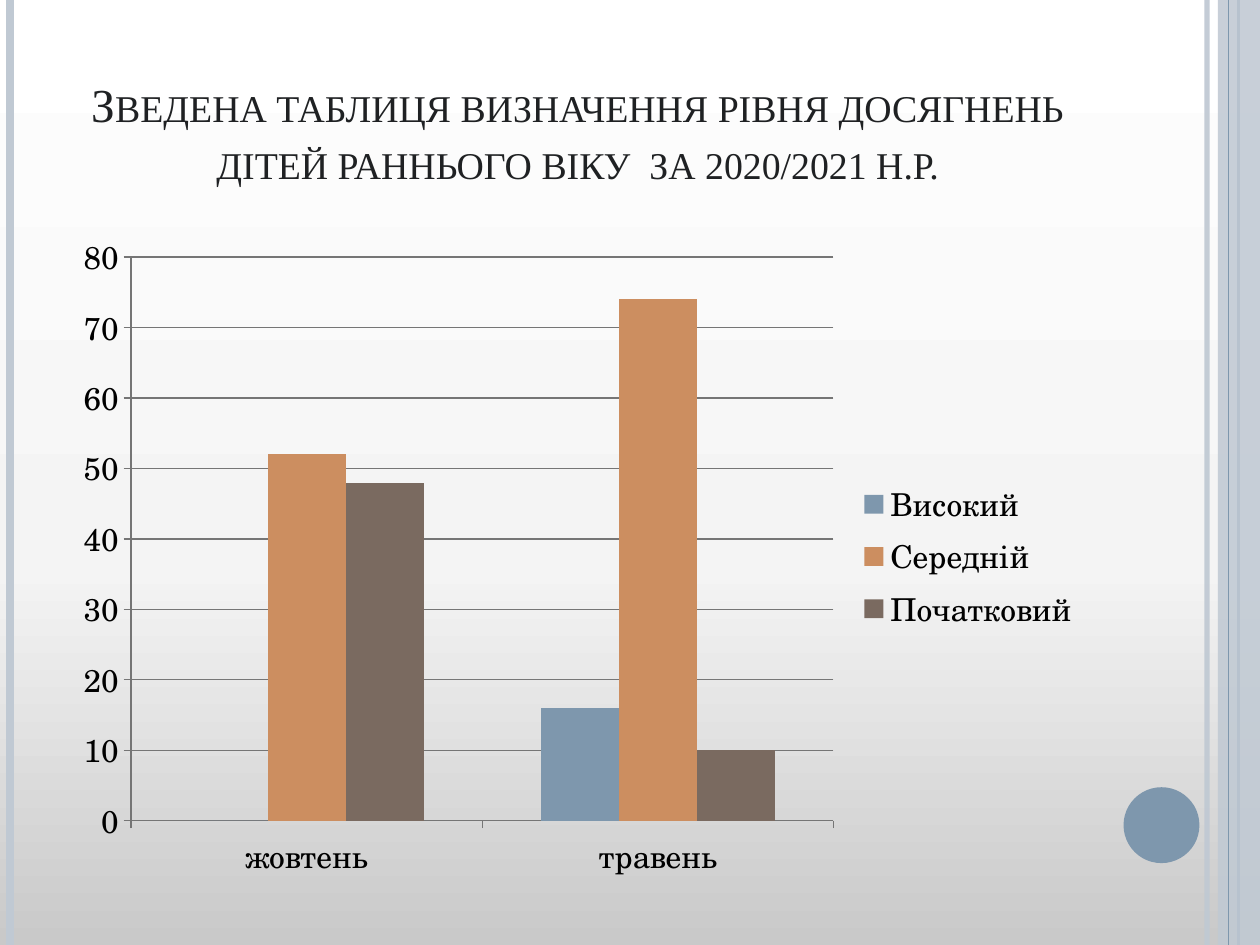
import copy

import pptx
import pptx.chart.data
import pptx.dml.color
import pptx.enum.chart
import pptx.enum.shapes
import pptx.enum.text
import pptx.oxml.ns
import pptx.oxml.xmlchemy
import pptx.util

Cm = pptx.util.Cm
Pt = pptx.util.Pt
qn = pptx.oxml.ns.qn
new_element = pptx.oxml.xmlchemy.OxmlElement

WIDTH, HEIGHT = 25.4, 19.05
BLUE, PALE, ORANGE, BROWN = "7E97AD", "C0C9D3", "CC8E60", "7A6A60"
GRID = "757575"


def color(hex_string):
    return pptx.dml.color.RGBColor.from_string(hex_string)


def set_alpha(shape, percent):
    """Make the colour of a shape's fill or line partly transparent."""
    tint = shape._element.spPr.find(".//" + qn("a:srgbClr"))
    alpha = new_element("a:alpha")
    alpha.set("val", str(percent * 1000))
    tint.append(alpha)


class SlideBuilder:
    """Holds the slide's fonts and the page being drawn."""
    title_font = "Times New Roman"
    chart_font = "TeX Gyre Schola"

    def __init__(self, page):
        self.page = page

    def background(self, stops, angle):
        fill = self.page.background.fill
        fill.gradient()
        fill.gradient_angle = angle
        stop_list = self.page._element.find(".//" + qn("a:gsLst"))
        while len(stop_list) < len(stops):
            stop_list.append(copy.deepcopy(stop_list[0]))
        for stop, (position, tint) in zip(fill.gradient_stops, stops):
            stop.position = position
            stop.color.rgb = color(tint)

    def vertical_line(self, x, tint, width, alpha=100):
        line = self.page.shapes.add_connector(
            pptx.enum.shapes.MSO_CONNECTOR.STRAIGHT, Cm(x), 0, Cm(x), Cm(HEIGHT))
        line.line.color.rgb = color(tint)
        line.line.width = Pt(width)
        line._element.spPr.append(new_element("a:effectLst"))
        if alpha < 100:
            set_alpha(line, alpha)

    def shape(self, kind, left, top, width, height, tint, alpha=100):
        shape = self.page.shapes.add_shape(
            kind, Cm(left), Cm(top), Cm(width), Cm(height))
        shape.shadow.inherit = False
        shape.fill.solid()
        shape.fill.fore_color.rgb = color(tint)
        shape.line.fill.background()
        if alpha < 100:
            set_alpha(shape, alpha)

    def title(self, text, left, top, width, height):
        title = self.page.shapes.title
        title.left, title.top = Cm(left), Cm(top)
        title.width, title.height = Cm(width), Cm(height)
        frame = title.text_frame
        frame.text = text
        frame.word_wrap = True
        frame.auto_size = pptx.enum.text.MSO_AUTO_SIZE.NONE
        frame.vertical_anchor = pptx.enum.text.MSO_ANCHOR.BOTTOM
        para = frame.paragraphs[0]
        para.alignment = pptx.enum.text.PP_ALIGN.CENTER
        span = para.runs[0]
        span.font.name = self.title_font
        span.font.size = Pt(27)
        span.font.color.rgb = color("1F2123")
        span.font._element.set("cap", "small")

    def column_chart(self, categories, series, left, top, width, height):
        """Series are (name, values, colour) rows."""
        data = pptx.chart.data.CategoryChartData()
        data.categories = categories
        for name, values, _ in series:
            data.add_series(name, values)
        chart = self.page.shapes.add_chart(
            pptx.enum.chart.XL_CHART_TYPE.COLUMN_CLUSTERED,
            Cm(left), Cm(top), Cm(width), Cm(height), data).chart
        chart.has_title = False
        chart.font.name = self.chart_font
        chart.font.size = Pt(18)
        chart.font.color.rgb = color("000000")
        chart.has_legend = True
        chart.legend.position = pptx.enum.chart.XL_LEGEND_POSITION.RIGHT
        chart.legend.include_in_layout = False

        plot = chart.plots[0]
        plot.gap_width = 150
        plot.overlap = 0
        plot.vary_by_categories = False
        for bars, (_, _, tint) in zip(plot.series, series):
            bars.format.fill.solid()
            bars.format.fill.fore_color.rgb = color(tint)

        values_axis = chart.value_axis
        values_axis.minimum_scale, values_axis.maximum_scale = 0, 80
        values_axis.major_unit = 10
        values_axis.has_major_gridlines = True
        for axis in (chart.category_axis, values_axis):
            axis.major_tick_mark = pptx.enum.chart.XL_TICK_MARK.OUTSIDE
        for part in (chart.category_axis, values_axis, values_axis.major_gridlines):
            part.format.line.color.rgb = color(GRID)
            part.format.line.width = Pt(0.75)


def main():
    deck = pptx.Presentation()
    deck.slide_width, deck.slide_height = Cm(WIDTH), Cm(HEIGHT)
    builder = SlideBuilder(deck.slides.add_slide(deck.slide_layouts[5]))
    shapes = pptx.enum.shapes.MSO_SHAPE

    builder.background([(0, "C9C9C9"), (0.4, "F4F4F4"), (1, "FFFFFF")], 90)
    builder.vertical_line(24.33, PALE, 3, alpha=93)
    builder.vertical_line(0.2, PALE, 4.5)
    builder.vertical_line(24.97, BLUE, 1.5)
    builder.shape(shapes.RECTANGLE, 24.55, 0, 0.85, HEIGHT, PALE, alpha=87)
    builder.vertical_line(24.76, BLUE, 0.75)
    builder.shape(shapes.OVAL, 22.65, 15.87, 1.53, 1.53, BLUE)

    builder.title(
        "Зведена таблиця визначення рівня досягнень дітей раннього віку  за 2020/2021 н.р.",
        1.27, 0.76, 20.75, 3.18)
    builder.column_chart(
        ["жовтень", "травень"],
        [("Високий", (0, 16), BLUE),
         ("Середній", (52, 74), ORANGE),
         ("Початковий", (48, 10), BROWN)],
        1.27, 4.45, 20.75, 13.54)
    deck.save("out.pptx")


if __name__ == "__main__":
    main()
